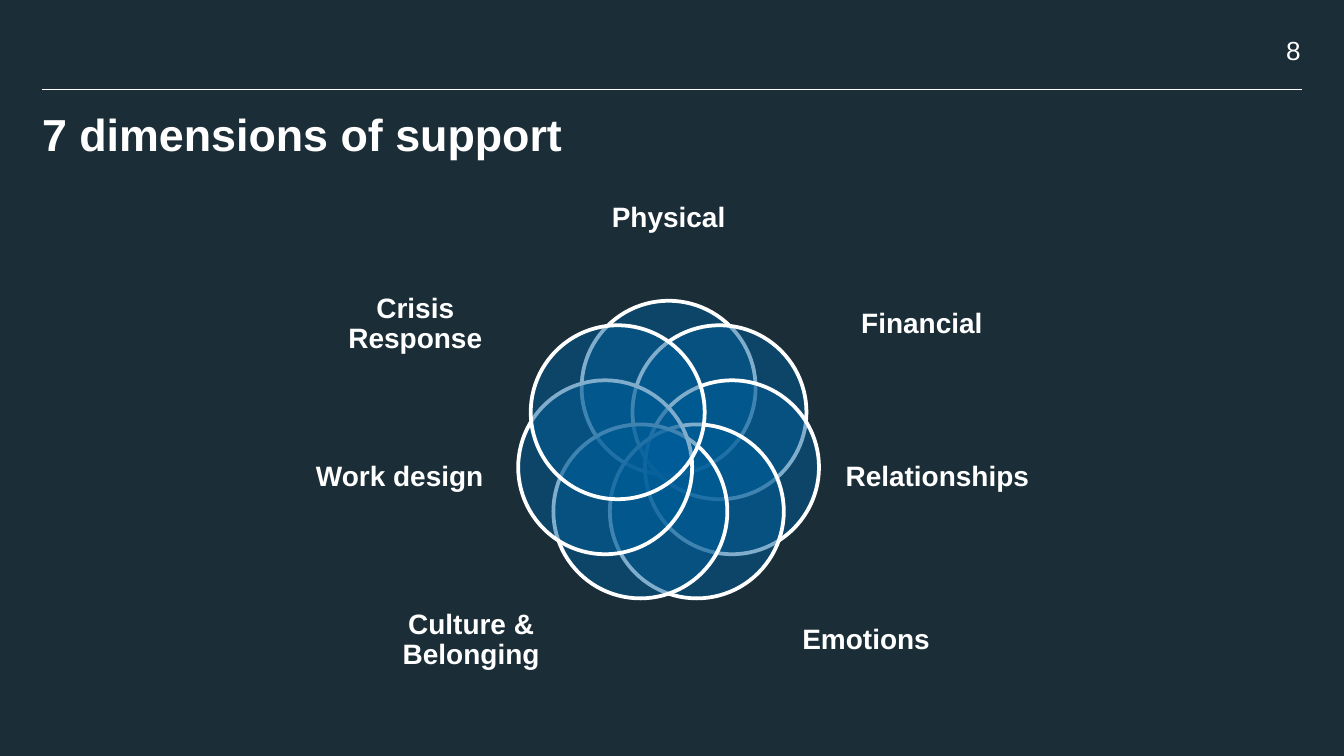
import math
from dataclasses import dataclass

import pptx
import pptx.dml.color
import pptx.enum.shapes
import pptx.enum.text
import pptx.oxml.ns
import pptx.util
from lxml import etree

Pt = pptx.util.Pt
RGB = pptx.dml.color.RGBColor.from_string
ALIGN = pptx.enum.text.PP_ALIGN
ANCHOR = pptx.enum.text.MSO_ANCHOR
qn = pptx.oxml.ns.qn


@dataclass(frozen=True)
class Theme:
    font: str = "Arial"
    background: str = "1B2D37"
    ink: str = "FFFFFF"
    circle: str = "005D99"
    circle_alpha: int = 50
    title_size: int = 24
    label_size: int = 15
    number_size: int = 14


THEME = Theme()

# Ring of circles
CENTER_X, CENTER_Y = 358.2, 242.6
RING_RADIUS = 34.85
DIAMETER = 93.2

# Label text, offset from the ring's axis, middle height, box width, box height
DIMENSIONS = [
    ("Physical", 0, 117, 106.6, 56.9),
    ("Financial", 135.7, 173.9, 100.8, 62.6),
    ("Relationships", 144, 256, 98.6, 67),
    ("Emotions", 105.8, 343.1, 106.6, 61.2),
    ("Culture & Belonging", -105.8, 343.1, 106.6, 61.2),
    ("Work design", -144, 256, 98.6, 67),
    ("Crisis Response", -135.7, 173.9, 100.8, 62.6),
]


def add_text(s, text, x, y, w, h, size, bold=False, align=ALIGN.LEFT,
             anchor=ANCHOR.TOP):
    sp = s.shapes.add_textbox(Pt(x), Pt(y), Pt(w), Pt(h))
    tf = sp.text_frame
    tf.text = text
    tf.word_wrap = True
    tf.vertical_anchor = anchor
    tf.margin_left = tf.margin_right = tf.margin_top = tf.margin_bottom = 0
    p = tf.paragraphs[0]
    p.alignment = align
    font = p.runs[0].font
    font.name, font.size, font.bold = THEME.font, Pt(size), bold
    font.color.rgb = RGB(THEME.ink)
    return p


def add_rule(s, x1, x2, y):
    line = s.shapes.add_connector(
        pptx.enum.shapes.MSO_CONNECTOR.STRAIGHT, Pt(x1), Pt(y), Pt(x2), Pt(y))
    line.line.color.rgb = RGB(THEME.ink)
    line.line.width = Pt(0.5)
    etree.SubElement(line._element.spPr, qn("a:effectLst"))


def add_circle(s, cx, cy):
    sp = s.shapes.add_shape(
        pptx.enum.shapes.MSO_SHAPE.OVAL, Pt(cx - DIAMETER / 2),
        Pt(cy - DIAMETER / 2), Pt(DIAMETER), Pt(DIAMETER))
    sp.shadow.inherit = False
    sp.fill.solid()
    sp.fill.fore_color.rgb = RGB(THEME.circle)
    color = sp._element.spPr.find(qn("a:solidFill")).find(qn("a:srgbClr"))
    etree.SubElement(color, qn("a:alpha"), val=str(THEME.circle_alpha * 1000))
    sp.line.color.rgb = RGB(THEME.ink)
    sp.line.width = Pt(2)


def add_label(s, text, dx, cy, w, h):
    p = add_text(s, text, CENTER_X + dx - w / 2, cy - h / 2, w, h,
                 THEME.label_size, True, ALIGN.CENTER, ANCHOR.MIDDLE)
    p.line_spacing = 0.9
    p.space_after = Pt(0.35 * THEME.label_size)


def main():
    prs = pptx.Presentation()
    prs.slide_width, prs.slide_height = Pt(720), Pt(405)
    s = prs.slides.add_slide(prs.slide_layouts[6])
    s.background.fill.solid()
    s.background.fill.fore_color.rgb = RGB(THEME.background)

    # Header
    add_rule(s, 22.5, 697.5, 47.8)
    add_text(s, "8", 660.8, 18.2, 36, 17, THEME.number_size, align=ALIGN.RIGHT)
    add_text(s, "7 dimensions of support", 22.5, 57, 675, 29,
             THEME.title_size, bold=True)

    # Overlapping circles, clockwise from the top, each with its label
    for i, label in enumerate(DIMENSIONS):
        angle = 2 * math.pi * i / len(DIMENSIONS)
        add_circle(s, CENTER_X + RING_RADIUS * math.sin(angle),
                   CENTER_Y - RING_RADIUS * math.cos(angle))
        add_label(s, *label)

    prs.save("out.pptx")


if __name__ == "__main__":
    main()
